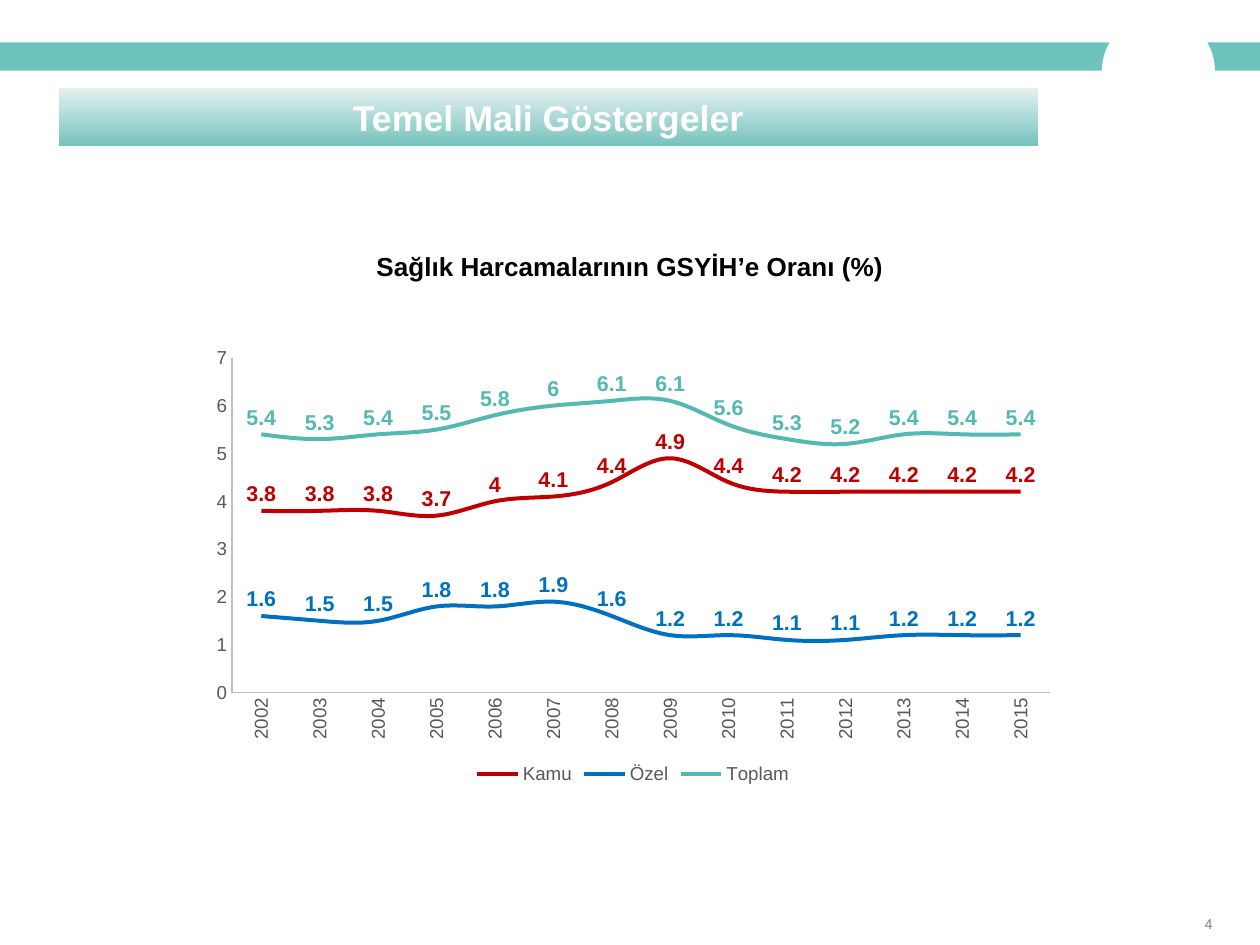
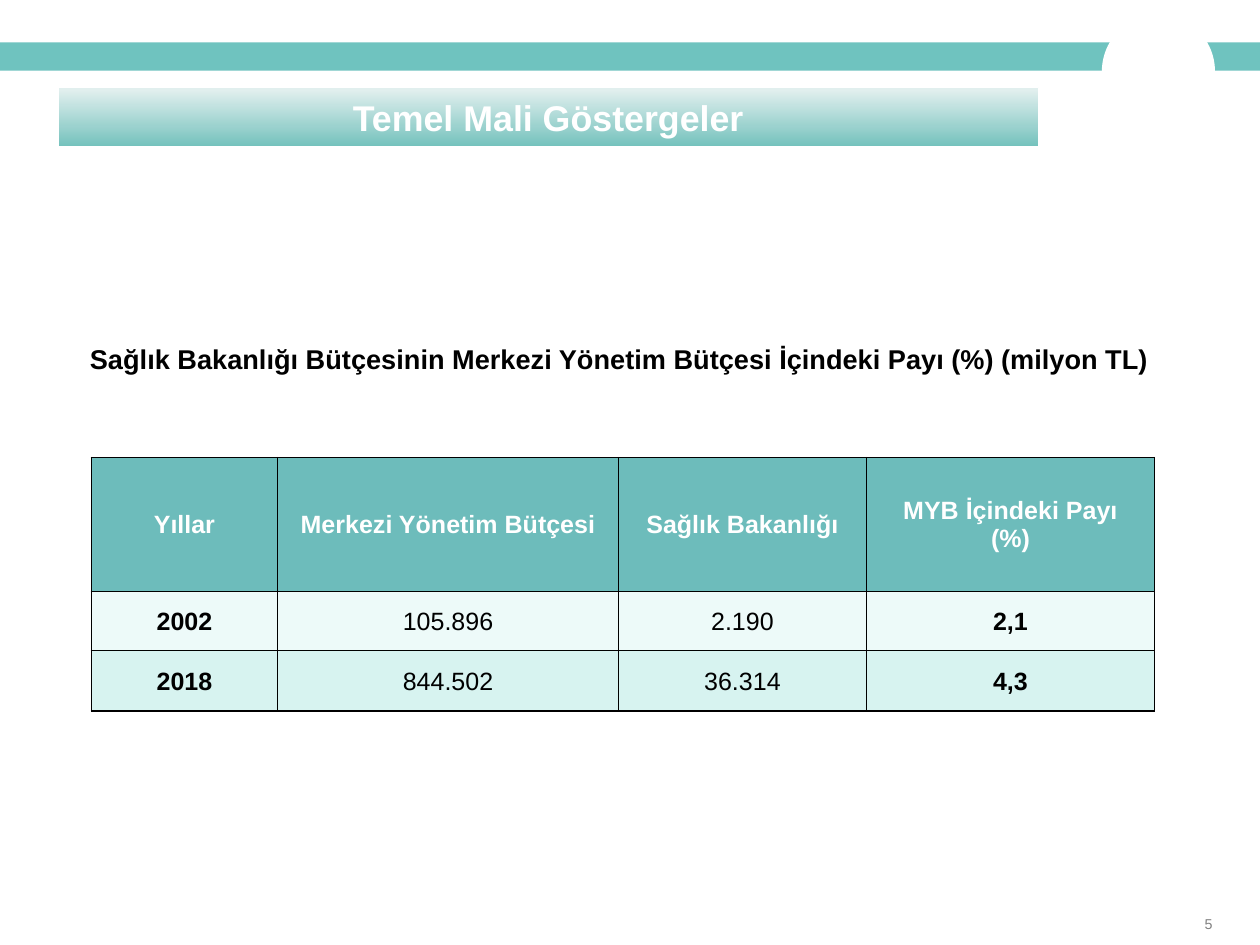
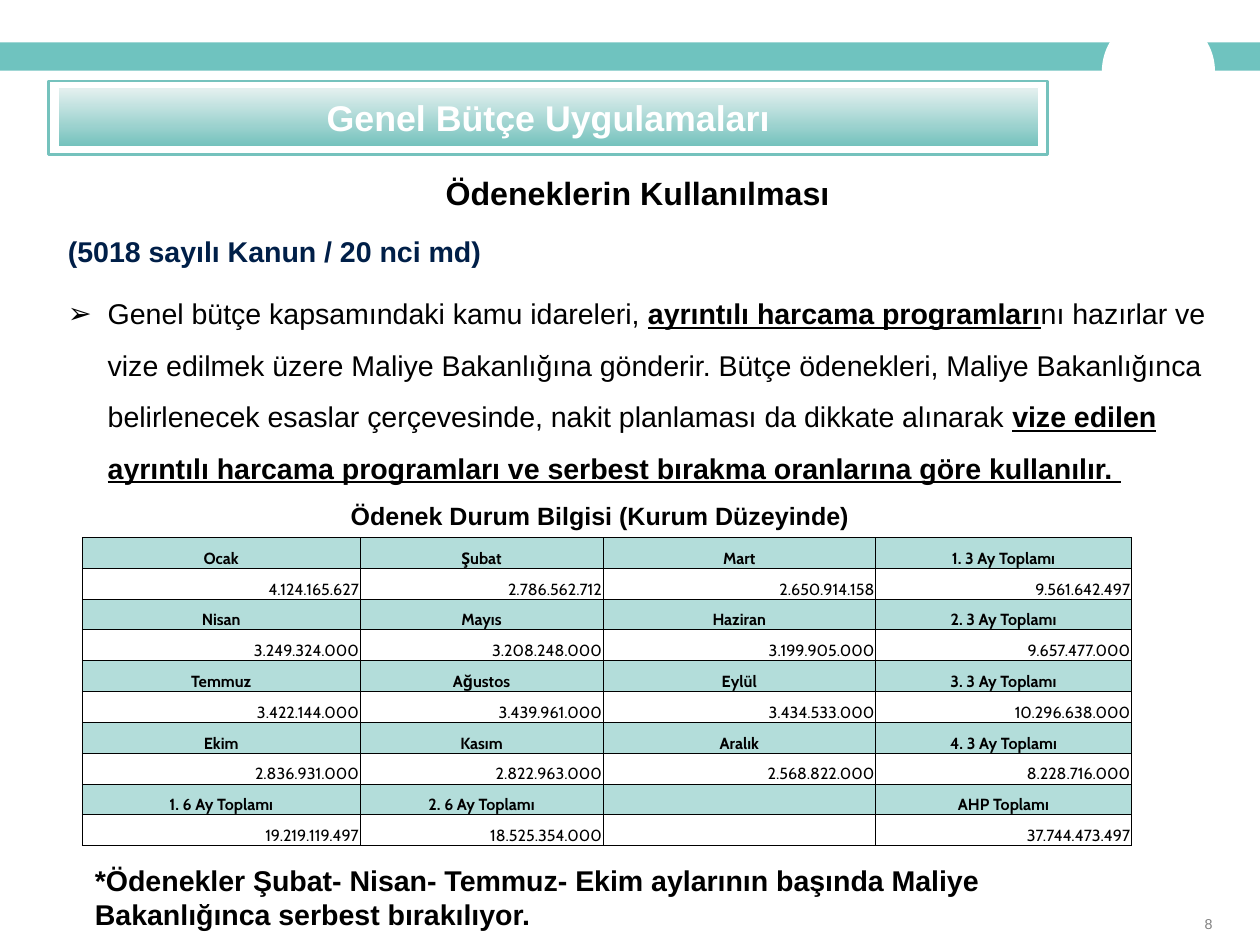
from collections.abc import Callable
from dataclasses import dataclass

from lxml.etree import SubElement
from pptx import Presentation
from pptx.chart.data import CategoryChartData
from pptx.dml.color import RGBColor
from pptx.enum.chart import XL_CHART_TYPE as ChartType
from pptx.enum.chart import XL_LABEL_POSITION as LabelPosition
from pptx.enum.chart import XL_LEGEND_POSITION as LegendPosition
from pptx.enum.chart import XL_MARKER_STYLE as Marker
from pptx.enum.chart import XL_TICK_MARK as TickMark
from pptx.enum.shapes import MSO_SHAPE as Preset
from pptx.enum.text import MSO_ANCHOR as Anchor
from pptx.enum.text import MSO_AUTO_SIZE as AutoSize
from pptx.enum.text import PP_ALIGN as Align
from pptx.oxml.ns import qn
from pptx.oxml.xmlchemy import OxmlElement
from pptx.slide import Slide, SlideLayout
from pptx.util import Emu, Inches, Pt

COLORS = {
    "white": "FFFFFF", "black": "000000", "gray": "808080", "navy": "001F48",
    "band": "6FC3BF", "title_top": "E1EFEE", "title_bottom": "75C2BD",
    "axis": "BFBFBF", "axis_text": "595959",
    "public": "C00000", "private": "0070C0", "total": "54B8B3",
    "budget_head": "6DBCBB", "budget_light": "EDFAF9", "budget_dark": "D7F3F0",
    "month": "B3DDDA",
}
FONT = "Arial"
COLUMNS, ROWS = 98, 73.5  # slide grid
CELL = Inches(0.1)


@dataclass(frozen=True)
class Box:
    """A rectangle in grid columns and rows."""
    left: float
    top: float
    width: float
    height: float

    def place(self) -> tuple[Emu, Emu, Emu, Emu]:
        return tuple(grid(n) for n in (self.left, self.top, self.width, self.height))


@dataclass(frozen=True)
class Style:
    size: float
    color: str = "black"
    bold: bool = True
    font: str = FONT


@dataclass(frozen=True)
class CellLook:
    fill: str
    text: Style
    align: Align = Align.CENTER


@dataclass(frozen=True)
class Span:
    text: str
    stressed: bool = False


@dataclass(frozen=True)
class Series:
    name: str
    color: str
    values: tuple[float, ...]


TITLE_BOX = Box(4.5, 6.8, 76.3, 4.6)
SPENDING = (
    Series("Kamu", "public",
           (3.8, 3.8, 3.8, 3.7, 4, 4.1, 4.4, 4.9, 4.4, 4.2, 4.2, 4.2, 4.2, 4.2)),
    Series("Özel", "private",
           (1.6, 1.5, 1.5, 1.8, 1.8, 1.9, 1.6, 1.2, 1.2, 1.1, 1.1, 1.2, 1.2, 1.2)),
    Series("Toplam", "total",
           (5.4, 5.3, 5.4, 5.5, 5.8, 6, 6.1, 6.1, 5.6, 5.3, 5.2, 5.4, 5.4, 5.4)),
)
BUDGET = (
    ("Yıllar", "Merkezi Yönetim Bütçesi", "Sağlık Bakanlığı", "MYB İçindeki Payı\v(%)"),
    ("2002", "105.896", "2.190", "2,1"),
    ("2018", "844.502", "36.314", "4,3"),
)
ALLOCATIONS = (
    ("Ocak", "Şubat", "Mart", "1. 3 Ay Toplamı"),
    ("4.124.165.627", "2.786.562.712", "2.650.914.158", "9.561.642.497"),
    ("Nisan", "Mayıs", "Haziran", "2. 3 Ay Toplamı"),
    ("3.249.324.000", "3.208.248.000", "3.199.905.000", "9.657.477.000"),
    ("Temmuz", "Ağustos", "Eylül", "3. 3 Ay Toplamı"),
    ("3.422.144.000", "3.439.961.000", "3.434.533.000", "10.296.638.000"),
    ("Ekim", "Kasım", "Aralık", "4. 3 Ay Toplamı"),
    ("2.836.931.000", "2.822.963.000", "2.568.822.000", "8.228.716.000"),
    ("1. 6 Ay Toplamı", "2. 6 Ay Toplamı", "", "AHP Toplamı"),
    ("19.219.119.497", "18.525.354.000", "", "37.744.473.497"),
)
PROGRAMME = (
    Span("Genel bütçe kapsamındaki kamu idareleri, "),
    Span("ayrıntılı harcama programları", True),
    Span("nı hazırlar ve vize edilmek üzere Maliye Bakanlığına gönderir. Bütçe ödenekleri, "
         "Maliye Bakanlığınca belirlenecek esaslar çerçevesinde, nakit planlaması da "
         "dikkate alınarak "),
    Span("vize edilen ayrıntılı harcama programları ve serbest bırakma oranlarına göre "
         "kullanılır. ", True),
)


def grid(cells: float) -> Emu:
    return Emu(round(cells * CELL))


def rgb(name: str) -> RGBColor:
    return RGBColor.from_string(COLORS[name])


def set_font(font, style: Style) -> None:
    font.name, font.size, font.bold = style.font, Pt(style.size), style.bold
    font.color.rgb = rgb(style.color)


def set_text(frame, text: str, style: Style, align: Align = Align.LEFT):
    """Fill a frame with one paragraph and return it."""
    frame.text = text
    para = frame.paragraphs[0]
    para.alignment = align
    for run in para.runs:
        set_font(run.font, style)
    return para


def add_text(page: Slide, box: Box, text: str, style: Style,
             align: Align = Align.LEFT, anchor: Anchor = Anchor.TOP):
    frame = page.shapes.add_textbox(*box.place()).text_frame
    frame.word_wrap = True
    frame.vertical_anchor = anchor
    set_text(frame, text, style, align)
    return frame


def add_shape(page: Slide, preset: Preset, box: Box, fill: str | None = None,
              line: str | None = None):
    shape = page.shapes.add_shape(preset, *box.place())
    shape.shadow.inherit = False
    if fill:
        shape.fill.solid()
        shape.fill.fore_color.rgb = rgb(fill)
    else:
        shape.fill.background()
    if line:
        shape.line.color.rgb = rgb(line)
        shape.line.width = Pt(1.5)
    else:
        shape.line.fill.background()
    return shape


def decorate_layout(layout: SlideLayout, page: Slide) -> None:
    """Draw the band and its round gap, then hand them to the layout."""
    for preset, box, fill in (
        (Preset.RECTANGLE, Box(0, 3.3, COLUMNS, 2.2), "band"),
        (Preset.OVAL, Box(85.7, 1.1, 8.8, 8.9), "white"),
    ):
        layout.shapes.element.append(add_shape(page, preset, box, fill).element)


def add_page(deck, layout: SlideLayout, title: str, number: int) -> Slide:
    page = deck.slides.add_slide(layout)
    bar = page.shapes.title
    bar.left, bar.top, bar.width, bar.height = TITLE_BOX.place()
    bar.fill.gradient()
    bar.fill.gradient_angle = 270
    stops = zip(bar.fill.gradient_stops, (0.04, 1), ("title_top", "title_bottom"))
    for stop, position, color in stops:
        stop.position = position
        stop.color.rgb = rgb(color)
    bar.line.color.rgb = rgb("white")
    bar.line.width = Pt(0.75)
    frame = bar.text_frame
    frame.auto_size = AutoSize.NONE
    frame.vertical_anchor = Anchor.MIDDLE
    set_text(frame, title, Style(20, "white"), Align.CENTER)

    footer = add_text(page, Box(93.7, 71.2, 1.4, 1.3), str(number),
                      Style(8, "gray", False), anchor=Anchor.MIDDLE)
    footer.margin_left = footer.margin_right = footer.margin_top = footer.margin_bottom = 0
    return page


def set_borders(cell, widths: dict[str, float]) -> None:
    """Draw black edges; the keys L, R, T and B come in that order."""
    properties = cell._tc.get_or_add_tcPr()
    for index, (edge, width) in enumerate(widths.items()):
        line = OxmlElement(f"a:ln{edge}")
        line.set("w", str(Pt(width)))
        fill = SubElement(line, qn("a:solidFill"))
        SubElement(fill, qn("a:srgbClr"), val=COLORS["black"])
        properties.insert(index, line)


def add_table(page: Slide, left: float, top: float, widths: tuple[float, ...],
              heights: tuple[float, ...], texts: tuple[tuple[str, ...], ...],
              look_at: Callable[[int, int], CellLook], anchor: Anchor,
              outer: float = 0.5, inner: float = 0.5) -> None:
    box = Box(left, top, sum(widths), sum(heights))
    table = page.shapes.add_table(len(heights), len(widths), *box.place()).table
    table.first_row = table.horz_banding = False
    for column, width in zip(table.columns, widths):
        column.width = grid(width)
    for row, height in zip(table.rows, heights):
        row.height = grid(height)
    for r, row_texts in enumerate(texts):
        for c, text in enumerate(row_texts):
            cell, look = table.cell(r, c), look_at(r, c)
            cell.margin_left = cell.margin_right = cell.margin_top = Inches(0.01)
            cell.margin_bottom = 0
            cell.vertical_anchor = anchor
            cell.fill.solid()
            cell.fill.fore_color.rgb = rgb(look.fill)
            para = set_text(cell.text_frame, text, look.text, look.align)
            if not text:
                SubElement(para._p, qn("a:endParaRPr"), sz=str(round(look.text.size * 100)))
            at_edge = {"L": c == 0, "R": c == len(widths) - 1,
                       "T": r == 0, "B": r == len(heights) - 1}
            set_borders(cell, {edge: outer if end else inner for edge, end in at_edge.items()})


def budget_look(row: int, column: int) -> CellLook:
    if row == 0:
        return CellLook("budget_head", Style(14, "white"))
    fill = "budget_light" if row % 2 else "budget_dark"
    return CellLook(fill, Style(14, bold=column in (0, 3)))


def allocation_look(row: int, column: int) -> CellLook:
    if row % 2 == 0:
        return CellLook("month", Style(9, font="Cabin"))
    return CellLook("white", Style(9, bold=False, font="Cabin"), Align.RIGHT)


def add_spending_chart(page: Slide, box: Box) -> None:
    data = CategoryChartData()
    data.categories = [str(year) for year in range(2002, 2016)]
    for series in SPENDING:
        data.add_series(series.name, series.values)
    chart = page.shapes.add_chart(ChartType.LINE, *box.place(), data).chart
    chart.has_title = False
    small = Style(10.5, "axis_text", False)
    set_font(chart.font, small)

    for axis in (chart.category_axis, chart.value_axis):
        axis.has_major_gridlines = False
        axis.major_tick_mark = axis.minor_tick_mark = TickMark.NONE
        axis.format.line.color.rgb = rgb("axis")
        axis.format.line.width = Pt(0.75)
        set_font(axis.tick_labels.font, small)
    chart.value_axis.minimum_scale = 0
    chart.value_axis.maximum_scale = 7
    chart.value_axis.major_unit = 1
    body = chart.category_axis._element.find(f"{qn('c:txPr')}/{qn('a:bodyPr')}")
    body.set("rot", "-5400000")
    body.set("vert", "horz")

    chart.has_legend = True
    chart.legend.position = LegendPosition.BOTTOM
    chart.legend.include_in_layout = False
    set_font(chart.legend.font, small)

    plot = chart.plots[0]
    plot.vary_by_categories = False
    for drawn, series in zip(plot.series, SPENDING):
        drawn.smooth = True
        drawn.marker.style = Marker.NONE
        drawn.format.line.color.rgb = rgb(series.color)
        drawn.format.line.width = Pt(2.25)
        labels = drawn.data_labels
        labels.show_value = True
        labels.position = LabelPosition.ABOVE
        set_font(labels.font, Style(12, series.color))


def add_programme(frame) -> None:
    """Append the arrow-bulleted paragraph about spending programmes."""
    para = frame.add_paragraph()
    para.line_spacing = 1.5
    properties = para._p.get_or_add_pPr()
    properties.set("marL", str(Inches(0.31)))
    properties.set("indent", str(-Inches(0.31)))
    SubElement(properties, qn("a:buFont"), typeface=FONT)
    SubElement(properties, qn("a:buChar"), char="➢")
    for span in PROGRAMME:
        run = para.add_run()
        run.text = span.text
        set_font(run.font, Style(16, bold=span.stressed))
        run.font.underline = span.stressed


def main() -> None:
    deck = Presentation()
    deck.slide_width, deck.slide_height = grid(COLUMNS), grid(ROWS)
    layout = deck.slide_layouts[5]

    page = add_page(deck, layout, "Temel Mali Göstergeler", 4)
    decorate_layout(layout, page)
    add_spending_chart(page, Box(15.5, 26.3, 67.5, 35.1))
    add_text(page, Box(24, 19, 50, 3.6), "Sağlık Harcamalarının GSYİH’e Oranı (%)",
             Style(14.6), Align.CENTER)

    page = add_page(deck, layout, "Temel Mali Göstergeler", 5)
    heading = add_text(
        page, Box(3.1, 24.9, 90.2, 8.7),
        "Sağlık Bakanlığı Bütçesinin Merkezi Yönetim Bütçesi İçindeki Payı (%) (milyon TL)",
        Style(15.2), Align.CENTER)
    heading.paragraphs[0].line_spacing = 1.5
    add_table(page, 7.1, 35.6, (14.5, 26.5, 19.3, 22.4), (10.4, 4.6, 4.7),
              BUDGET, budget_look, Anchor.MIDDLE, outer=1)

    page = add_page(deck, layout, "Genel Bütçe Uygulamaları", 8)
    add_shape(page, Preset.RECTANGLE, Box(3.8, 6.3, 77.7, 5.7), line="title_bottom")
    add_text(page, Box(0.7, 12.2, 98 - 2 * 0.7 + 1.2, 5.5), "Ödeneklerin Kullanılması",
             Style(18), Align.CENTER, Anchor.MIDDLE)
    law = add_text(page, Box(4.3, 16.4, 92, 22), "(5018 sayılı Kanun / 20 nci md)",
                   Style(16, "navy"))
    law.paragraphs[0].line_spacing = 1.5
    law.paragraphs[0].space_after = Pt(6)
    add_programme(law)
    add_table(page, 6.4, 41.8, (21.6, 18.9, 21.2, 19.9), (2.4,) * len(ALLOCATIONS),
              ALLOCATIONS, allocation_look, Anchor.BOTTOM)
    add_text(page, Box(26.3, 38.4, 44, 3.4), "Ödenek Durum Bilgisi (Kurum Düzeyinde)",
             Style(14))
    add_text(page, Box(6.4, 66.6, 82.3, 6.4),
             "*Ödenekler Şubat- Nisan- Temmuz- Ekim aylarının başında Maliye "
             "Bakanlığınca serbest bırakılıyor.", Style(16))

    deck.save("out.pptx")


if __name__ == "__main__":
    main()
